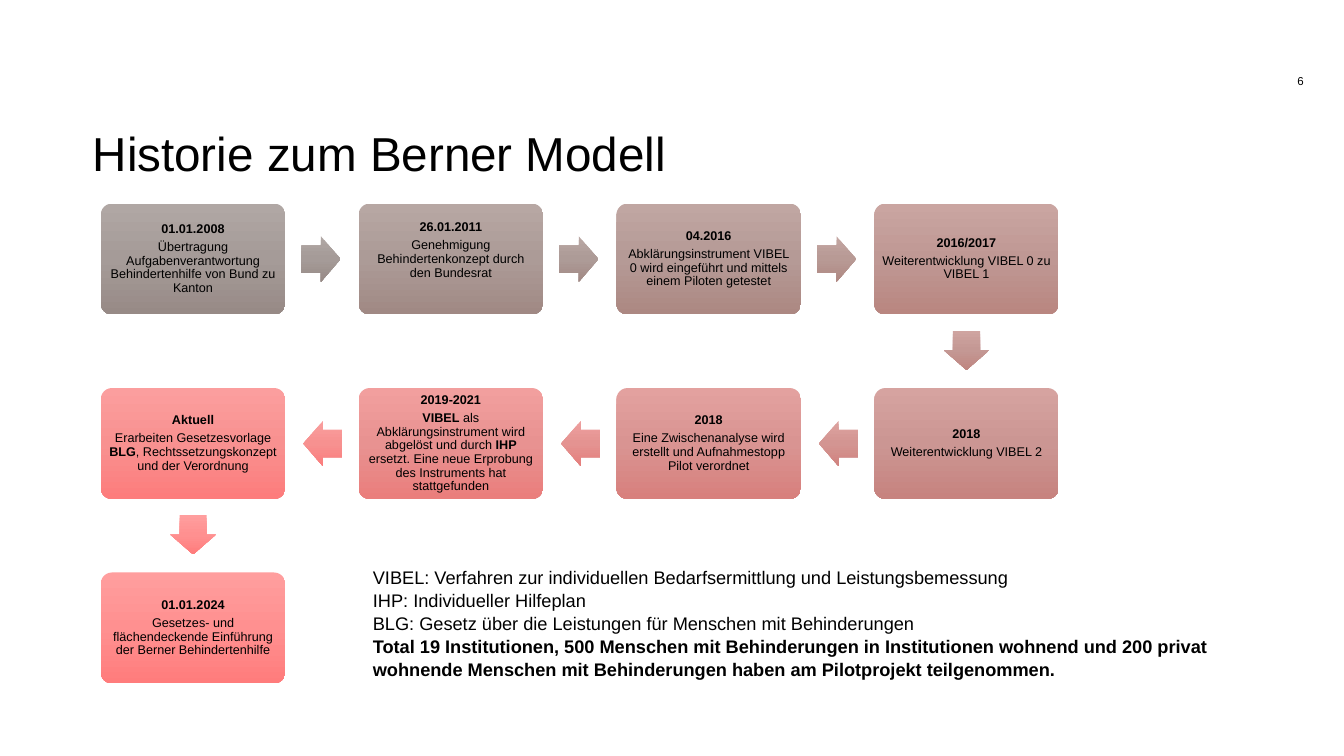
"""Builds the slide on the history of the Bern model as a snaking timeline."""
from lxml import etree
from pptx import Presentation
from pptx.dml.color import RGBColor
from pptx.enum.shapes import MSO_SHAPE
from pptx.enum.text import MSO_ANCHOR, PP_ALIGN
from pptx.oxml.ns import qn
from pptx.util import Inches, Pt

BOX, ARROW = MSO_SHAPE.ROUNDED_RECTANGLE, MSO_SHAPE.RIGHT_ARROW
TOP, MIDDLE = MSO_ANCHOR.TOP, MSO_ANCHOR.MIDDLE
LEFT, CENTER, RIGHT = PP_ALIGN.LEFT, PP_ALIGN.CENTER, PP_ALIGN.RIGHT

TITLE = "Historie zum Berner Modell"
PAGE = "6"
# Text between double asterisks is bold.
STEPS = [
    (0, 0, "01.01.2008", "Übertragung Aufgabenverantwortung Behindertenhilfe von Bund zu Kanton"),
    (1, 0, "26.01.2011", "Genehmigung Behindertenkonzept durch den Bundesrat"),
    (2, 0, "04.2016", "Abklärungsinstrument VIBEL 0 wird eingeführt und mittels einem Piloten getestet"),
    (3, 0, "2016/2017", "Weiterentwicklung VIBEL 0 zu VIBEL 1"),
    (3, 1, "2018", "Weiterentwicklung VIBEL 2"),
    (2, 1, "2018", "Eine Zwischenanalyse wird erstellt und Aufnahmestopp Pilot verordnet"),
    (1, 1, "2019-2021", "**VIBEL** als Abklärungsinstrument wird abgelöst und durch **IHP** ersetzt. "
                        "Eine neue Erprobung des Instruments hat stattgefunden"),
    (0, 1, "Aktuell", "Erarbeiten Gesetzesvorlage **BLG**, Rechtssetzungskonzept und der Verordnung"),
    (0, 2, "01.01.2024", "Gesetzes- und flächendeckende Einführung der Berner Behindertenhilfe"),
]
NOTES = [
    "VIBEL: Verfahren zur individuellen Bedarfsermittlung und Leistungsbemessung",
    "IHP: Individueller Hilfeplan",
    "BLG: Gesetz über die Leistungen für Menschen mit Behinderungen",
    "**Total 19 Institutionen, 500 Menschen mit Behinderungen in Institutionen wohnend und 200 privat "
    "wohnende Menschen mit Behinderungen haben am Pilotprojekt teilgenommen.**",
]
COLORS = {
    "text": "000000",
    "boxes": ["B0A7A4 A59B98 978A86", "B7A7A3 AC9B97 A08984", "C0A6A2 B59A96 AC8882",
              "CAA5A1 BF9894 B98680", "D6A3A0 CB9693 C7837F", "E3A19F D99492 D8807D",
              "F29F9E E89291 EA7E7C", "FB9E9E F89190 FD7C7C", "FF9E9E FF9090 FF7C7C"],
    "arrows": ["B0A7A4 A59B98 978A86", "B9A7A3 AD9B97 A28984", "C3A6A2 B89A95 AF8882",
               "CFA4A0 C49894 BF8580", "DDA29F D39592 D1827E", "EE9F9E E49391 E57E7C",
               "F99E9E F79190 FB7C7C", "FF9E9E FF9090 FF7C7C"],
}
X0, Y0, COL, ROW = 1, 2.02, 2.557, 1.83
BOX_W, BOX_H = 1.83, 1.1
ARROW_W, ARROW_H, LAG = 0.39, 0.45, 0.01
RAISED = {"26.01.2011": 0.17}


def write(shape, lines, size, align, anchor, insets, spacing=1.0, after=0):
    tf = shape.text_frame
    tf.word_wrap = True
    tf.vertical_anchor = anchor
    tf.margin_left, tf.margin_top, tf.margin_right, tf.margin_bottom = map(Inches, insets)
    for i, line in enumerate(lines):
        p = tf.add_paragraph() if i else tf.paragraphs[0]
        p.alignment, p.line_spacing, p.space_after = align, spacing, Pt(after)
        for j, part in enumerate(line.split("**")):
            if part:
                r = p.add_run()
                r.text = part
                r.font.name, r.font.size, r.font.bold = "Arial", Pt(size), j % 2 == 1
                r.font.color.rgb = RGBColor.from_string(COLORS["text"])


def add_text(slide, place, *args, **kwargs):
    write(slide.shapes.add_textbox(*map(Inches, place)), *args, **kwargs)


def add_graded(slide, kind, cx, cy, w, h, adjustments, stops):
    sp = slide.shapes.add_shape(kind, *map(Inches, (cx - w / 2, cy - h / 2, w, h)))
    for i, value in enumerate(adjustments):
        sp.adjustments[i] = value
    sp.shadow.inherit = False
    sp.line.fill.background()
    sp.fill.gradient()
    sp.fill.gradient_angle = 270
    grad = sp._element.spPr.find(qn("a:gradFill"))
    grad.set("rotWithShape", "0")
    stop_list = grad.find(qn("a:gsLst"))
    for stop in list(stop_list):
        stop_list.remove(stop)
    for i, color in enumerate(stops.split()):
        stop = etree.SubElement(stop_list, qn("a:gs"), pos=str(i * 50000))
        etree.SubElement(stop, qn("a:srgbClr"), val=color)
    return sp


def center(step):
    return X0 + step[0] * COL + BOX_W / 2, Y0 + step[1] * ROW + BOX_H / 2


def main():
    prs = Presentation()
    prs.slide_width, prs.slide_height = Inches(13.33), Inches(7.5)
    slide = prs.slides.add_slide(prs.slide_layouts[6])

    add_text(slide, (0.92, 1.17, 12.01, 0.68), [TITLE], 34, LEFT, MIDDLE, (0, 0, 0, 0))
    add_text(slide, (12.58, 0.73, 0.35, 0.12), [PAGE], 8.2, RIGHT, TOP, (0, 0, 0, 0))

    for step, stops in zip(STEPS, COLORS["boxes"]):
        sp = add_graded(slide, BOX, *center(step), BOX_W, BOX_H, [0.1], stops)
        date, body = step[2:]
        insets = (0.04, 0.04, 0.04, 0.04 + RAISED.get(date, 0))
        write(sp, [f"**{date}**", body], 9, CENTER, MIDDLE, insets, 0.9, 3.15)

    for step, follower, stops in zip(STEPS, STEPS[1:], COLORS["arrows"]):
        (x1, y1), (x2, y2) = center(step), center(follower)
        dx, dy = follower[0] - step[0], follower[1] - step[1]
        sp = add_graded(slide, ARROW, (x1 + x2) / 2 - LAG * dx, (y1 + y2) / 2 - LAG * dy,
                        ARROW_W, ARROW_H, [0.6, 0.5], stops)
        sp.rotation = 90 if dy else 90 * (1 - dx)

    add_text(slide, (3.6, 5.56, 8.91, 1.8), NOTES, 13, LEFT, TOP, (0.1, 0.05, 0.1, 0.05), 1.05)
    prs.save("out.pptx")


if __name__ == "__main__":
    main()
